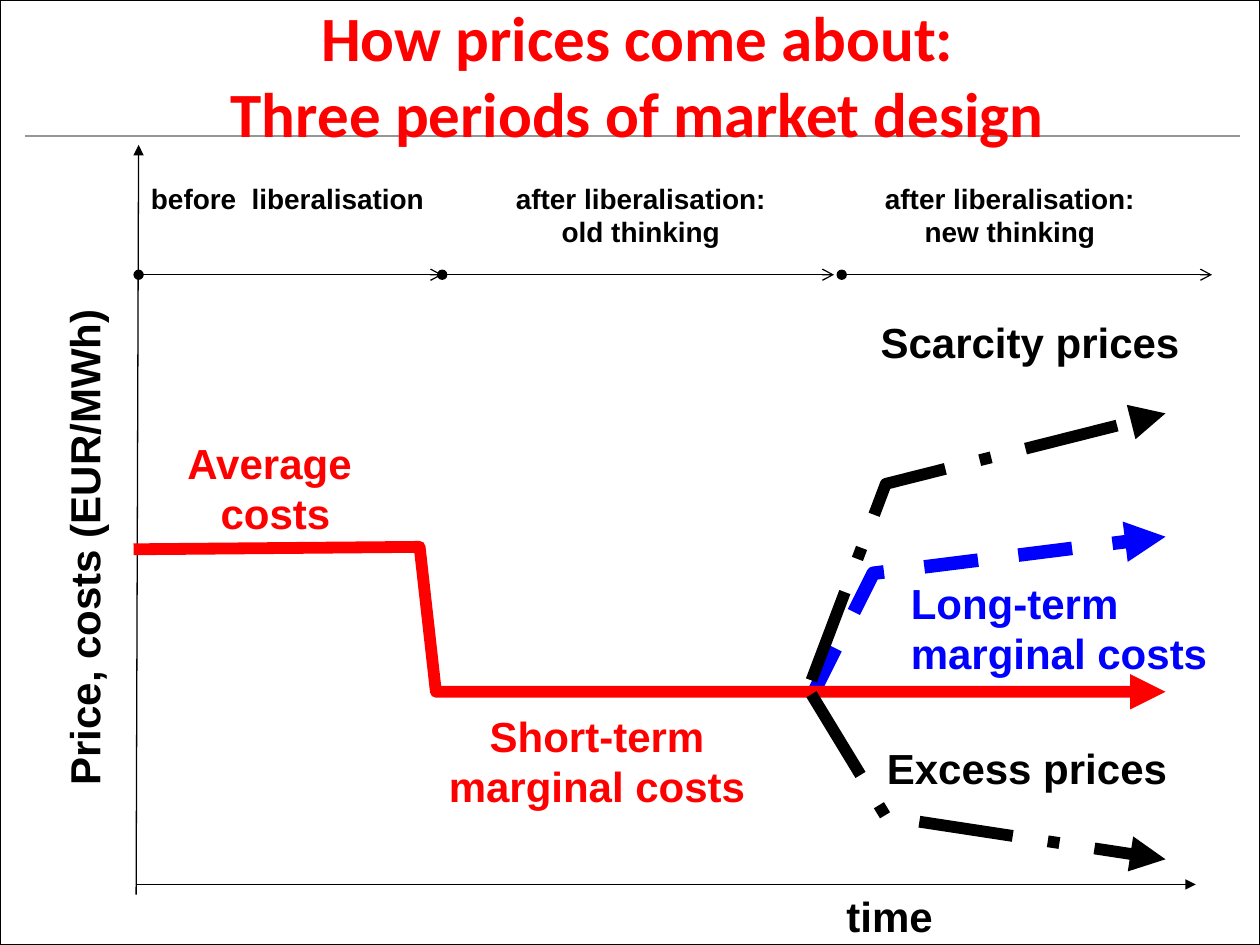
from pptx import Presentation
from pptx.dml.color import RGBColor
from pptx.enum.dml import MSO_LINE as Dash
from pptx.enum.shapes import MSO_CONNECTOR as Connector, MSO_SHAPE as Shape
from pptx.enum.text import MSO_ANCHOR as Anchor, MSO_AUTO_SIZE as AutoSize, PP_ALIGN as Align
from pptx.oxml.ns import qn
from pptx.util import Pt
from lxml.etree import SubElement

BLACK = RGBColor(0, 0, 0)
WHITE = RGBColor(255, 255, 255)
RED = RGBColor(255, 0, 0)
BLUE = RGBColor(0, 0, 255)
GRAY = RGBColor(0x96, 0x96, 0x96)

CURVE_END = 666
BRANCH = 463.7
PERIOD_TOP = 100.1
PERIOD_LINE = 157


def style_line(shape, color, width, dash=None, head=None, tail=None):
    shape.line.color.rgb = color
    shape.line.width = Pt(width)
    if dash:
        shape.line.dash_style = dash
    outline = shape.line._get_or_add_ln()
    for tag, kind in (("a:headEnd", head), ("a:tailEnd", tail)):
        if kind:
            SubElement(outline, qn(tag), type=kind)


def add_frame(page):
    frame = page.shapes.add_shape(Shape.RECTANGLE, 0, 0, Pt(720), Pt(540))
    frame.shadow.inherit = False
    frame.fill.solid()
    frame.fill.fore_color.rgb = WHITE
    style_line(frame, BLACK, 0.75)


def add_line(page, start, end, color=BLACK, head=None, tail=None):
    points = [Pt(value) for value in (*start, *end)]
    line = page.shapes.add_connector(Connector.STRAIGHT, *points)
    SubElement(line._element.spPr, qn("a:effectLst"))
    style_line(line, color, 0.75, head=head, tail=tail)


def add_curve(page, points, color, width=6.75, dash=None):
    start, *rest = [(Pt(x), Pt(y)) for x, y in points]
    builder = page.shapes.build_freeform(*start, scale=1.0)
    builder.add_line_segments(rest, close=False)
    curve = builder.convert_to_shape()
    curve.shadow.inherit = False
    curve.fill.background()
    style_line(curve, color, width, dash, tail="triangle")


def add_text(page, text, place, color=BLACK, size=24, align=Align.LEFT, font="Arial"):
    box = page.shapes.add_textbox(*[Pt(value) for value in place])
    frame = box.text_frame
    frame.word_wrap = False
    frame.auto_size = AutoSize.SHAPE_TO_FIT_TEXT
    frame.text = text
    for para in frame.paragraphs:
        para.alignment = align
        para.font.name = font
        para.font.size = Pt(size)
        para.font.bold = True
        para.font.color.rgb = color
    return box


def add_title(page, text):
    box = add_text(page, text, (4.3, 25.9, 720, 67.7), RED, 36, Align.CENTER, "Calibri")
    frame = box.text_frame
    frame.word_wrap = True
    frame.auto_size = AutoSize.NONE
    frame.vertical_anchor = Anchor.BOTTOM
    frame.margin_bottom = Pt(8)


def add_period(page, text, place, start, end, align=Align.CENTER):
    add_text(page, text, place, size=16, align=align)
    add_line(page, (start, PERIOD_LINE), (end, PERIOD_LINE), head="oval", tail="arrow")


def add_axes(page):
    add_line(page, (77.8, 505.4), (683.3, 505.4), tail="triangle")
    add_line(page, (77.8, 511.2), (79.2, 82.8), tail="triangle")
    add_text(page, "time", (476.6, 505.4, 71.3, 36.7))
    label = add_text(page, "Price, costs (EUR/MWh)", (-96.5, 293, 289.4, 36.7))
    label.rotation = 270


def add_periods(page):
    add_period(page, "before  liberalisation", (79.2, PERIOD_TOP, 172.8, 26.6),
               79.2, 252.7, Align.LEFT)
    add_period(page, "after liberalisation:\vold thinking",
               (286.6, PERIOD_TOP, 159.1, 46.1), 252.7, 476.6)
    add_period(page, "after liberalisation:\vnew thinking",
               (497.5, PERIOD_TOP, 159.1, 46.1), 481, 692.6)


def add_curves(page):
    add_curve(page, [(BRANCH, 398.2), (499, 327.6), (CURVE_END, 306.7)],
              BLUE, 7.75, Dash.DASH)
    add_curve(page, [(BRANCH, 388.8), (506.2, 276.5), (CURVE_END, 236.2)],
              BLACK, dash=Dash.LONG_DASH_DOT)
    add_curve(page, [(76.3, 313.9), (239.8, 312.5), (249.1, 395.3), (CURVE_END, 395.3)], RED)
    add_curve(page, [(BRANCH, 396.7), (506.2, 466.6), (CURVE_END, 491)],
              BLACK, dash=Dash.LONG_DASH_DOT)


def add_curve_labels(page):
    add_text(page, "Average \ncosts", (99.4, 246.2, 115.9, 65.5), RED, align=Align.CENTER)
    add_text(page, "Short-term \vmarginal costs ", (248.4, 402.5, 192.2, 65.5),
             RED, align=Align.CENTER)
    add_text(page, "Long-term \vmarginal costs", (513.4, 326.2, 198.7, 65.5), BLUE)
    add_text(page, "Scarcity prices", (496.1, 177.1, 193.7, 36))
    add_text(page, "Excess prices", (499.7, 420.5, 190.1, 36))


def main():
    deck = Presentation()
    deck.slide_width, deck.slide_height = Pt(720), Pt(540)
    page = deck.slides.add_slide(deck.slide_layouts[6])
    add_frame(page)
    add_line(page, (14.4, 77.8), (708.5, 77.8), GRAY)
    add_axes(page)
    add_periods(page)
    add_curves(page)
    add_curve_labels(page)
    add_title(page, "How prices come about:\nThree periods of market design")
    deck.save("out.pptx")


if __name__ == "__main__":
    main()
